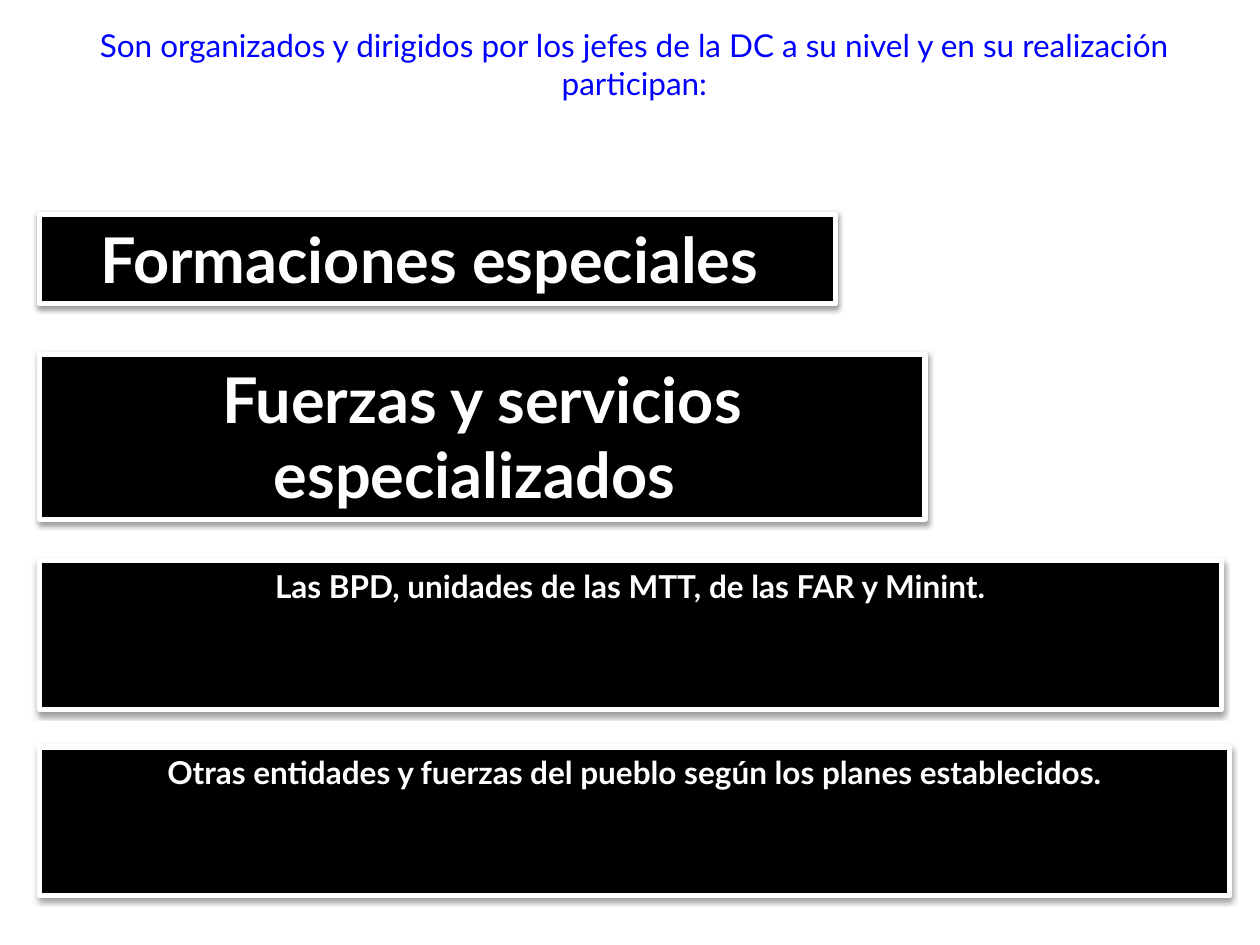
import pptx
import pptx.dml.color
import pptx.enum.shapes
import pptx.enum.text
import pptx.oxml
import pptx.oxml.ns
import pptx.util
from pptx.util import Cm, Pt

COLOURS = {"heading": "0000FF", "panel": "000000", "panel_edge": "FFFFFF", "panel_text": "FFFFFF"}
FONT = "Lato"
LEFT = 0.79

SHADOW = (
    f'<a:effectLst {pptx.oxml.ns.nsdecls("a")}>'
    f'<a:outerShdw blurRad="{Pt(3.1)}" dist="{Pt(1.6)}" dir="5400000" rotWithShape="0">'
    f'<a:srgbClr val="{COLOURS["panel"]}"><a:alpha val="38000"/></a:srgbClr>'
    "</a:outerShdw></a:effectLst>"
)


def colour(name):
    return pptx.dml.color.RGBColor.from_string(COLOURS[name])


def write(box, text, size, colour_name, bold=False, wrap=True):
    """Fill a box with one centred, top-anchored paragraph."""
    frame = box.text_frame
    frame.word_wrap = wrap
    frame.auto_size = pptx.enum.text.MSO_AUTO_SIZE.SHAPE_TO_FIT_TEXT
    frame.vertical_anchor = pptx.enum.text.MSO_ANCHOR.TOP
    para = frame.paragraphs[0]
    para.alignment = pptx.enum.text.PP_ALIGN.CENTER
    span = para.add_run()
    span.text = text
    span.font.name = FONT
    span.font.size = Pt(size)
    span.font.bold = bold
    span.font.color.rgb = colour(colour_name)


deck = pptx.Presentation()
deck.slide_width, deck.slide_height = Cm(25.4), Cm(19.05)
page = deck.slides.add_slide(deck.slide_layouts[6])

heading = page.shapes.add_textbox(Cm(LEFT), Cm(0.41), Cm(24), Cm(3))
write(
    heading,
    "Son organizados y dirigidos por los jefes de la DC a su nivel y en su realización participan:",
    18,
    "heading",
)

# top, width, height (cm), text size, wrap, text
panels = [
    (4.32, 16.05, 1.8, 36, False, "Formaciones especiales "),
    (7.14, 17.86, 3.33, 36, True, "Fuerzas y servicios especializados "),
    (11.3, 23.83, 3, 18, True, "Las BPD, unidades de las MTT, de las FAR y Minint."),
    (15.06, 24, 3, 18, True, "Otras entidades y fuerzas del pueblo según los planes establecidos."),
]
for top, width, height, size, wrap, text in panels:
    panel = page.shapes.add_shape(
        pptx.enum.shapes.MSO_SHAPE.RECTANGLE, Cm(LEFT), Cm(top), Cm(width), Cm(height)
    )
    panel.fill.solid()
    panel.fill.fore_color.rgb = colour("panel")
    panel.line.color.rgb = colour("panel_edge")
    panel.line.width = Pt(3)
    panel._element.spPr.append(pptx.oxml.parse_xml(SHADOW))
    write(panel, text, size, "panel_text", bold=True, wrap=wrap)

deck.save("out.pptx")
